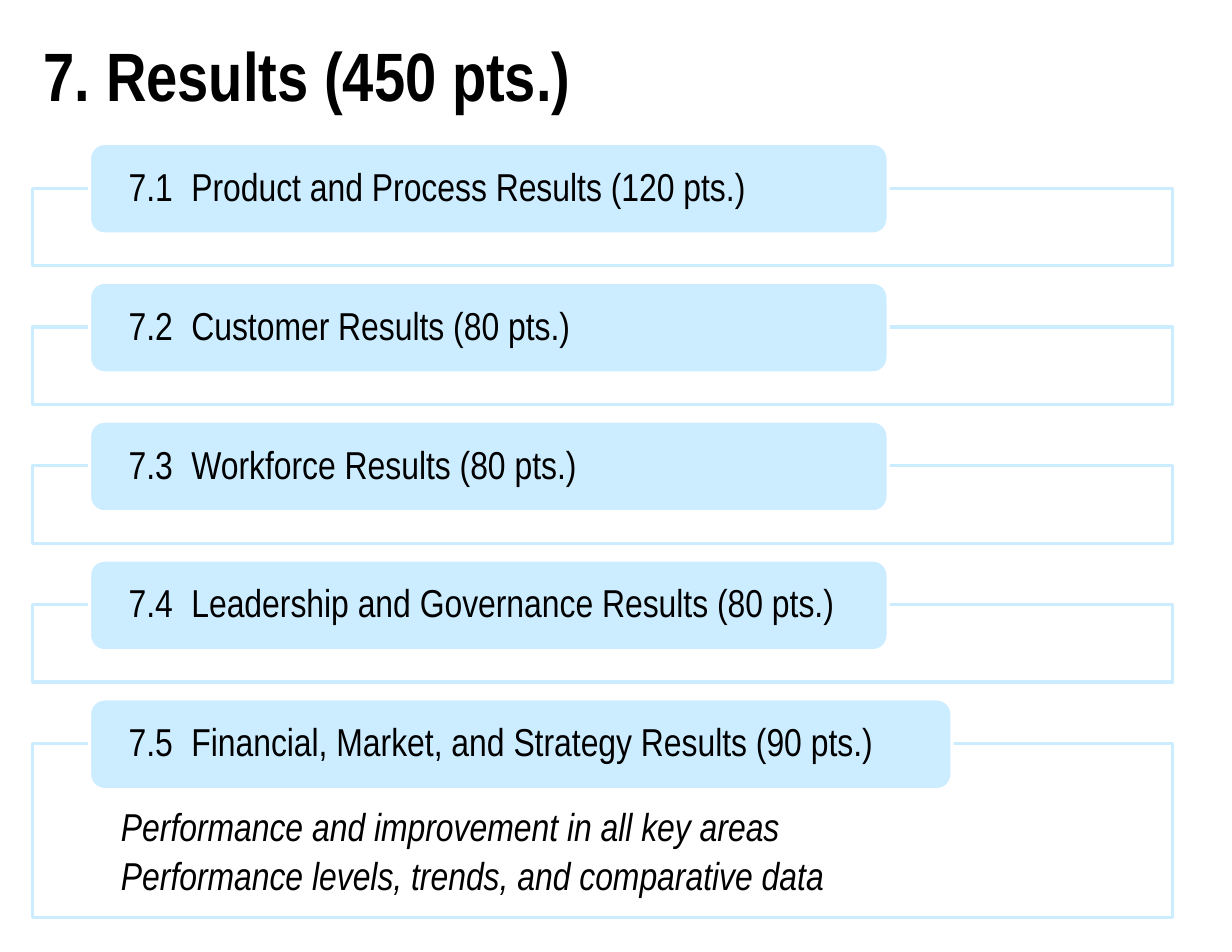
import pptx
import pptx.dml.color
import pptx.enum.shapes
import pptx.enum.text
import pptx.oxml
import pptx.oxml.ns
import pptx.util
from pptx.util import Inches

BLACK, WHITE, PALE_BLUE = "000000", "FFFFFF", "CCECFF"
ITEMS = [
    ("7.1", "Product and Process Results (120 pts.)"),
    ("7.2", "Customer Results (80 pts.)"),
    ("7.3", "Workforce Results (80 pts.)"),
    ("7.4", "Leadership and Governance Results (80 pts.)"),
    ("7.5", "Financial, Market, and Strategy Results (90 pts.)"),
]
DETAILS = [
    "Performance and improvement in all key areas",
    "Performance levels, trends, and comparative data",
]


def color(value):
    return pptx.dml.color.RGBColor.from_string(value)


def add_child(parent, tag, **attributes):
    child = pptx.oxml.ns.qn(tag)
    element = parent.makeelement(child, attributes)
    parent.append(element)
    return element


class ResultsPage:
    font_name = "Arial Narrow"
    body_size = 25
    line_width = 2

    def __init__(self, deck):
        self.page = deck.slides.add_slide(deck.slide_layouts[5])

    def set_font(self, paragraph, size, bold=False, italic=False):
        font = paragraph.font
        font.name, font.size = self.font_name, pptx.util.Pt(size)
        font.bold, font.italic = bold, italic
        font.color.rgb = color(BLACK)
        paragraph.alignment = pptx.enum.text.PP_ALIGN.LEFT

    def set_frame(self, frame, anchor, left, top, right, bottom):
        frame.word_wrap = True
        frame.auto_size = pptx.enum.text.MSO_AUTO_SIZE.NONE
        frame.vertical_anchor = anchor
        frame.margin_left, frame.margin_top = Inches(left), Inches(top)
        frame.margin_right, frame.margin_bottom = Inches(right), Inches(bottom)

    def title(self, text, left, top, width, height):
        title = self.page.shapes.title
        title.left, title.top = Inches(left), Inches(top)
        title.width, title.height = Inches(width), Inches(height)
        frame = title.text_frame
        frame.text = text
        self.set_frame(frame, pptx.enum.text.MSO_ANCHOR.MIDDLE, 0.1, 0.05, 0.1, 0.05)
        paragraph = frame.paragraphs[0]
        paragraph.line_spacing = pptx.util.Pt(46)
        self.set_font(paragraph, 44, bold=True)

    def shape(self, kind, left, top, width, height, fill, line):
        shape = self.page.shapes.add_shape(
            kind, Inches(left), Inches(top), Inches(width), Inches(height))
        shape.shadow.inherit = False
        shape.fill.solid()
        shape.fill.fore_color.rgb = color(fill)
        shape.line.color.rgb = color(line)
        shape.line.width = pptx.util.Pt(self.line_width)
        return shape

    def frame(self, top, height, lines=()):
        frame = self.shape(pptx.enum.shapes.MSO_SHAPE.RECTANGLE,
                           0.29, top, 10.18, height, WHITE, PALE_BLUE)
        # Slightly transparent fill
        fill_color = frame._element.spPr.find(
            pptx.oxml.ns.qn("a:solidFill"))[0]
        add_child(fill_color, "a:alpha", val="90000")
        if not lines:
            return
        text = frame.text_frame
        text.text = "\n".join(lines)
        self.set_frame(text, pptx.enum.text.MSO_ANCHOR.TOP, 0.79, 0.57, 0.79, 0.19)
        for paragraph in text.paragraphs:
            paragraph.line_spacing = 0.9
            paragraph.space_after = pptx.util.Pt(4.5)
            self.set_font(paragraph, self.body_size, italic=True)

    def label(self, top, width, number, name):
        label = self.shape(pptx.enum.shapes.MSO_SHAPE.ROUNDED_RECTANGLE,
                           0.8, top, width, 0.81, PALE_BLUE, WHITE)
        text = label.text_frame
        text.text = f"{number}\t{name}"
        self.set_frame(text, pptx.enum.text.MSO_ANCHOR.MIDDLE, 0.31, 0, 0.31, 0)
        paragraph = text.paragraphs[0]
        paragraph.line_spacing = 0.9
        # Tab stop that lines up the names after the numbers
        stops = add_child(paragraph._p.get_or_add_pPr(), "a:tabLst")
        add_child(stops, "a:tab", pos=str(Inches(0.56)), algn="l")
        self.set_font(paragraph, self.body_size)


def main():
    deck = pptx.Presentation()
    deck.slide_width, deck.slide_height = Inches(11), Inches(8.5)
    results = ResultsPage(deck)
    results.title("7. Results (450 pts.)", 0.29, 0, 9.73, 1.42)

    # One framed label per item; the last one is larger and holds the details
    for index, (number, name) in enumerate(ITEMS):
        top = 1.28 + 1.24 * index
        last = index == len(ITEMS) - 1
        results.frame(top + 0.4, 1.55 if last else 0.69, DETAILS if last else ())
        results.label(top, 7.7 if last else 7.13, number, name)

    deck.save("out.pptx")


if __name__ == "__main__":
    main()
